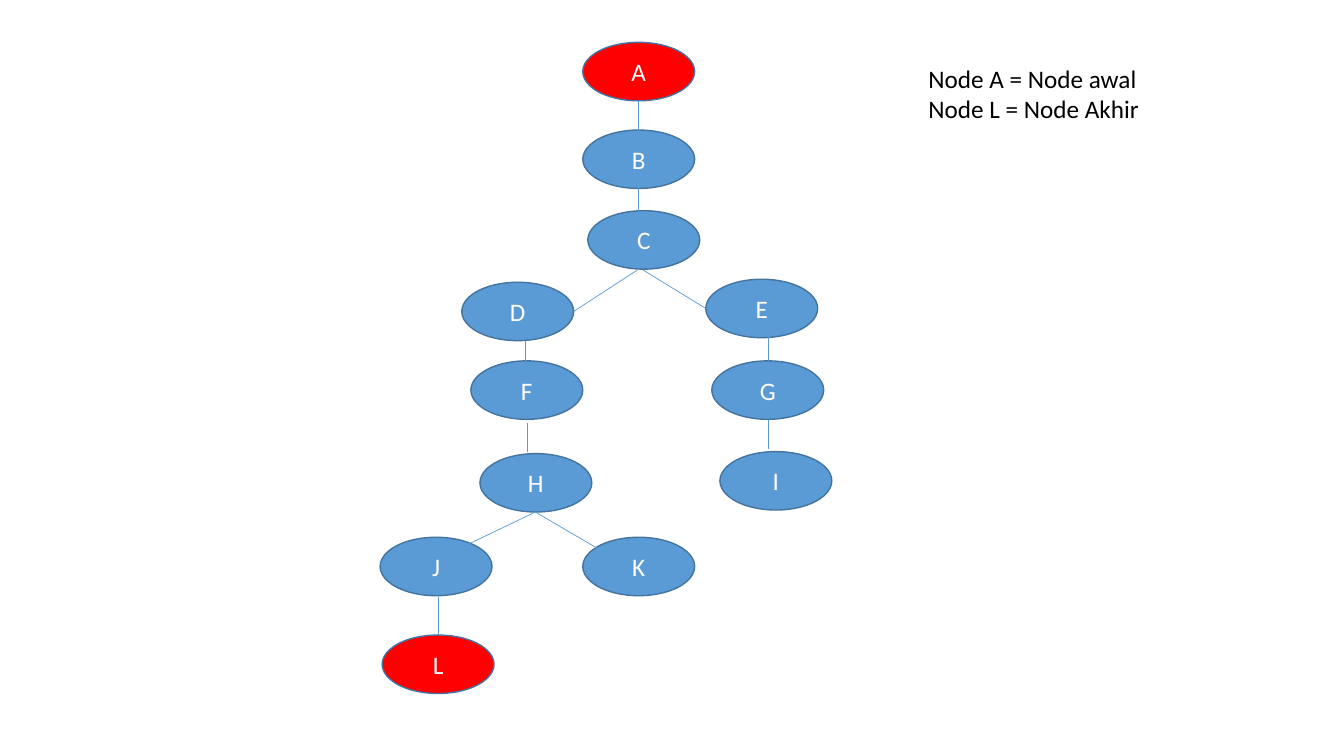
from lxml.etree import SubElement
from pptx import Presentation
from pptx.dml.color import RGBColor
from pptx.enum.shapes import MSO_CONNECTOR, MSO_SHAPE
from pptx.enum.text import MSO_ANCHOR, PP_ALIGN
from pptx.oxml.ns import qn
from pptx.util import Pt

PX = 9144  # 100 px to the inch
COLORS = {"node": "5B9BD5", "end": "FF0000", "rim": "43739E",
          "edge": "5B9BD5", "label": "FFFFFF", "text": "000000"}
NODE_W, NODE_H = 111, 58

# left, top
NODES = {
    "A": (578, 42), "B": (578, 129), "C": (583, 209),
    "D": (458, 280), "E": (700, 277), "F": (467, 358),
    "G": (706, 358), "H": (476, 450), "I": (714, 448),
    "J": (377, 533), "K": (578, 533), "L": (379, 630),
}
# x and y of each end
EDGES = {
    "AB": (633, 100, 633, 129), "BC": (633, 187, 633, 216),
    "CD": (632, 268, 569, 309), "GI": (762, 417, 762, 445),
    "CE": (638, 268, 700, 306), "DF": (521, 338, 521, 367),
    "EG": (762, 330, 762, 358), "FH": (523, 420, 523, 448),
    "HJ": (531, 508, 435, 554), "HK": (531, 508, 601, 549),
    "JL": (435, 592, 435, 630),
}


def emu(*sizes):
    return [size * PX for size in sizes]


def style(par, color):
    par.font.name = "Calibri"
    par.font.size = Pt(18)
    par.font.color.rgb = RGBColor.from_string(COLORS[color])


deck = Presentation()
deck.slide_width, deck.slide_height = emu(1333, 750)
slide = deck.slides.add_slide(deck.slide_layouts[6])
shapes = slide.shapes

for name, (left, top) in NODES.items():
    node = shapes.add_shape(MSO_SHAPE.OVAL, *emu(left, top, NODE_W, NODE_H))
    node.shadow.inherit = False
    node.fill.solid()
    fill = "end" if name in "AL" else "node"
    node.fill.fore_color.rgb = RGBColor.from_string(COLORS[fill])
    node.line.color.rgb = RGBColor.from_string(COLORS["rim"])
    node.line.width = Pt(1)
    frame = node.text_frame
    frame.vertical_anchor = MSO_ANCHOR.MIDDLE
    par = frame.paragraphs[0]
    par.text = name
    par.alignment = PP_ALIGN.CENTER
    style(par, "label")

for ends in EDGES.values():
    edge = shapes.add_connector(MSO_CONNECTOR.STRAIGHT, *emu(*ends))
    edge.line.color.rgb = RGBColor.from_string(COLORS["edge"])
    edge.line.width = Pt(0.5)
    SubElement(edge._element.spPr, qn("a:effectLst"))

legend = shapes.add_textbox(*emu(911, 58, 333, 71)).text_frame
legend.word_wrap = True
legend.text = "Node A = Node awal\nNode L = Node Akhir"
for par in legend.paragraphs:
    style(par, "text")

deck.save("out.pptx")
